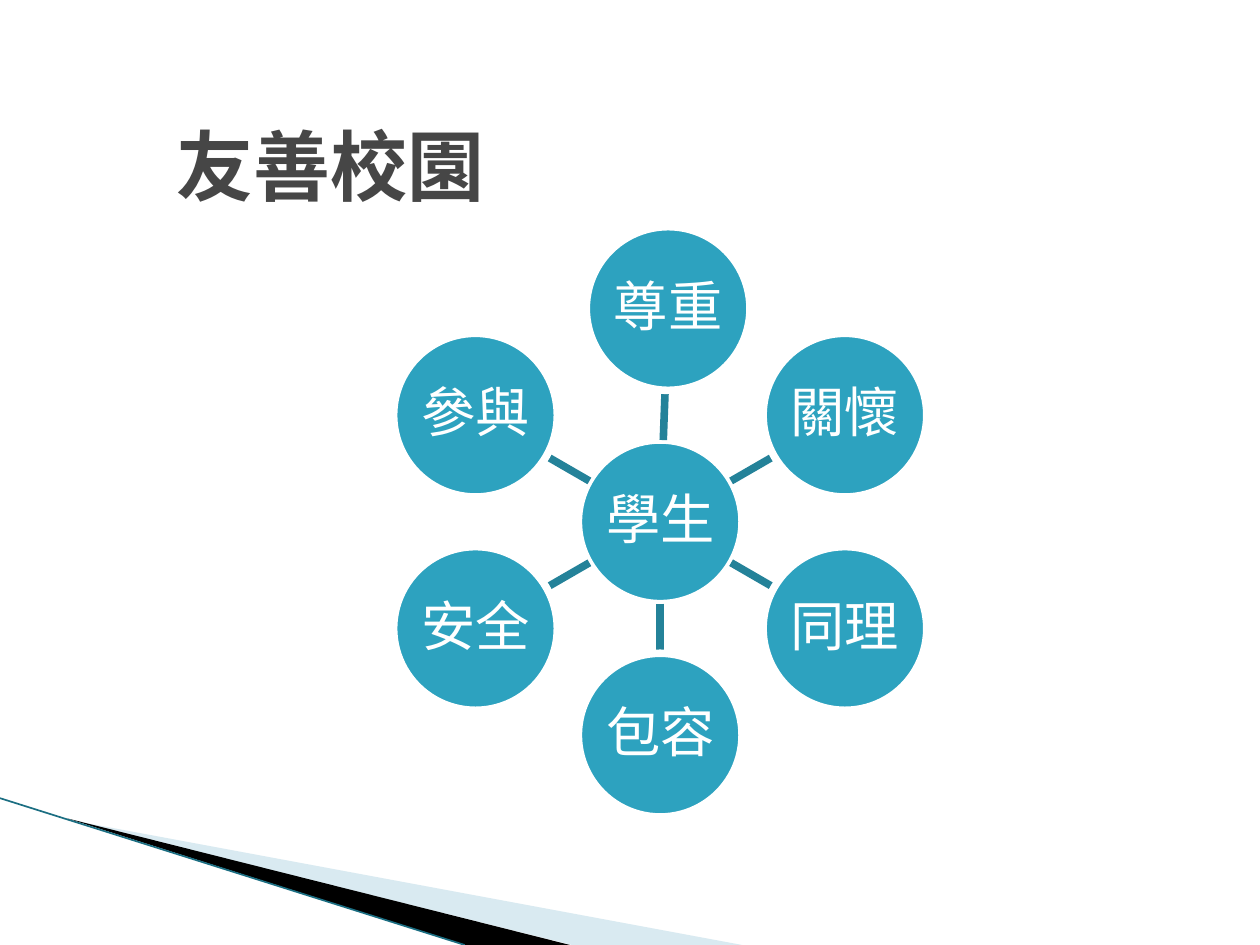
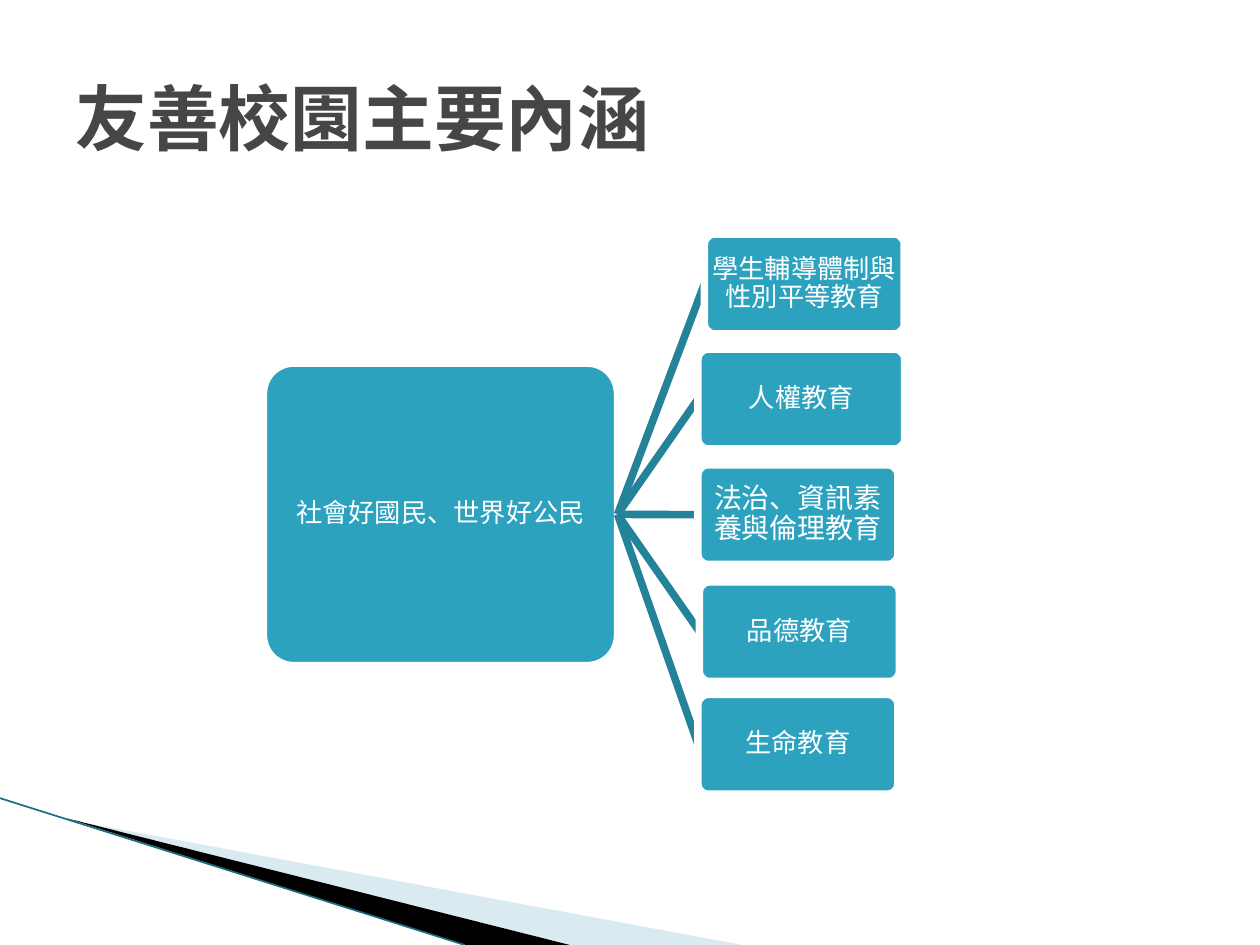
import math

import pptx
import pptx.util
from lxml import etree
from pptx.dml.color import RGBColor
from pptx.enum.shapes import MSO_CONNECTOR, MSO_SHAPE
from pptx.enum.text import MSO_ANCHOR, PP_ALIGN
from pptx.oxml.ns import qn
from pptx.util import Cm, Pt

WHITE = RGBColor(0xFF, 0xFF, 0xFF)
BLACK = RGBColor(0, 0, 0)
TITLE_GREY = RGBColor(0x46, 0x46, 0x46)
TEAL = RGBColor(0x2D, 0xA2, 0xBF)
SPOKE_TEAL = RGBColor(0x24, 0x82, 0x99)
PALE_TEAL = RGBColor(0xA0, 0xCB, 0xDC)
EDGE_TEAL = RGBColor(0x1B, 0x6E, 0x82)

LATIN_FONT = "Courier New"
CJK_FONT = "Noto Sans CJK TC"
OUTLINE = Pt(4.33)

# Corners of the two wedges that run along the foot of every slide, in cm
PALE_WEDGE = [(1.4, 16.53), (14.96, 19.05), (11.53, 19.05)]
BLACK_WEDGE = [(1.36, 16.5), (11.49, 19.05), (9.37, 19.05)]
EDGE_START, EDGE_END = (0, 16.09), (9.37, 19.05)

HUB = (13.31, 10.52)
CIRCLE_RADIUS = 1.65
ORBIT = 4.3
VALUES = ["尊重", "關懷", "同理", "包容", "安全", "參與"]
FIRST_VALUE_SHIFT = 0.16

TOPIC_HEIGHT = 2.01
# text, left, top, width, text size
TOPICS = [
    ("學生輔導體制與性別平等教育", 14.2, 4.72, 4.03, 15),
    ("人權教育", 14.07, 7.04, 4.17, 15),
    ("法治、資訊素養與倫理教育", 14.07, 9.37, 4.03, 16),
    ("品德教育", 14.1, 11.73, 4.03, 15),
    ("生命教育", 14.07, 14.0, 4.03, 15),
]


def write_text(frame, text, inset=None, align=None, line_spacing=None, **font_format):
    frame.word_wrap = True
    frame.vertical_anchor = MSO_ANCHOR.MIDDLE
    if inset is not None:
        for side in ("left", "top", "right", "bottom"):
            setattr(frame, f"margin_{side}", Cm(inset))
    paragraph = frame.paragraphs[0]
    paragraph.alignment = align
    paragraph.line_spacing = line_spacing
    run = paragraph.add_run()
    run.text = text
    color = font_format.pop("color")
    for attribute, value in {"name": LATIN_FONT, **font_format}.items():
        setattr(run.font, attribute, value)
    run.font.color.rgb = color
    east_asian = etree.SubElement(run.font._element, qn("a:ea"))
    east_asian.set("typeface", CJK_FONT)


def add_title(slide, text, left, top, width, size):
    title = slide.shapes.add_textbox(Cm(left), Cm(top), Cm(width), Cm(3.18))
    write_text(title.text_frame, text, size=Pt(size), bold=True, color=TITLE_GREY)


def add_wedge(slide, corners, color, opacity=None):
    first, *others = [(Cm(x), Cm(y)) for x, y in corners]
    outline = slide.shapes.build_freeform(*first)
    outline.add_line_segments(others, close=True)
    wedge = outline.convert_to_shape()
    wedge.shadow.inherit = False
    wedge.fill.solid()
    wedge.fill.fore_color.rgb = color
    wedge.line.fill.background()
    if opacity is not None:
        fill_color = wedge._element.spPr.find(f".//{qn('a:srgbClr')}")
        etree.SubElement(fill_color, qn("a:alpha")).set("val", str(opacity * 1000))


def add_line(slide, start, end, color, width):
    line = slide.shapes.add_connector(
        MSO_CONNECTOR.STRAIGHT, *(Cm(value) for value in (*start, *end)))
    line.line.color.rgb = color
    line.line.width = width
    etree.SubElement(line._element.spPr, qn("a:effectLst"))
    return line


def add_node(slide, kind, text, left, top, width, height, size, inset):
    """Add a teal shape with a thick white outline and centred text."""
    node = slide.shapes.add_shape(kind, Cm(left), Cm(top), Cm(width), Cm(height))
    node.shadow.inherit = False
    node.fill.solid()
    node.fill.fore_color.rgb = TEAL
    node.line.color.rgb = WHITE
    node.line.width = OUTLINE
    if kind == MSO_SHAPE.ROUNDED_RECTANGLE:
        node.adjustments[0] = 0.1
    write_text(node.text_frame, text, inset=inset, align=PP_ALIGN.CENTER,
               line_spacing=0.9, size=Pt(size), color=WHITE)
    return node


def add_circle(slide, text, center):
    left, top = (value - CIRCLE_RADIUS for value in center)
    add_node(slide, MSO_SHAPE.OVAL, text, left, top,
             2 * CIRCLE_RADIUS, 2 * CIRCLE_RADIUS, 31, 0.04)


def add_box(slide, text, left, top, width, height, size):
    return add_node(slide, MSO_SHAPE.ROUNDED_RECTANGLE, text,
                    left, top, width, height, size, 0.03)


def point_towards(start, end, distance):
    share = distance / math.dist(start, end)
    return tuple(a + (b - a) * share for a, b in zip(start, end))


def add_base_slide(deck):
    """Add a blank slide with the wedges at its foot."""
    slide = deck.slides.add_slide(deck.slide_layouts[6])
    add_wedge(slide, PALE_WEDGE, PALE_TEAL, opacity=40)
    add_wedge(slide, BLACK_WEDGE, BLACK)
    add_line(slide, EDGE_START, EDGE_END, EDGE_TEAL, Pt(0.95))
    return slide


def add_values_wheel(slide):
    add_circle(slide, "學生", HUB)
    for index, value in enumerate(VALUES):
        angle = math.tau * index / len(VALUES)
        shift = FIRST_VALUE_SHIFT if index == 0 else 0
        center = (HUB[0] + ORBIT * math.sin(angle) + shift,
                  HUB[1] - ORBIT * math.cos(angle))
        add_line(slide, point_towards(HUB, center, CIRCLE_RADIUS),
                 point_towards(center, HUB, CIRCLE_RADIUS), SPOKE_TEAL, OUTLINE)
        add_circle(slide, value, center)


def add_topics_tree(slide):
    goal = add_box(slide, "社會好國民、世界好公民", 5.31, 7.32, 7.14, 6.1, 15)
    for text, left, top, width, size in TOPICS:
        topic = add_box(slide, text, left, top, width, TOPIC_HEIGHT, size)
        branch = add_line(slide, (0, 0), (0, 0), SPOKE_TEAL, OUTLINE)
        branch.begin_connect(goal, 3)
        branch.end_connect(topic, 1)
        # The topic's white outline trims the end of its branch
        topic._element.addprevious(branch._element)


def main():
    deck = pptx.Presentation()
    deck.slide_width, deck.slide_height = Cm(25.4), Cm(19.05)

    values_slide = add_base_slide(deck)
    add_title(values_slide, "友善校園", 3.3, 1.73, 7.19, 44)
    add_values_wheel(values_slide)

    topics_slide = add_base_slide(deck)
    add_title(topics_slide, "友善校園主要內涵", 1.27, 0.76, 22.86, 41)
    add_topics_tree(topics_slide)

    deck.save("out.pptx")


if __name__ == "__main__":
    main()
